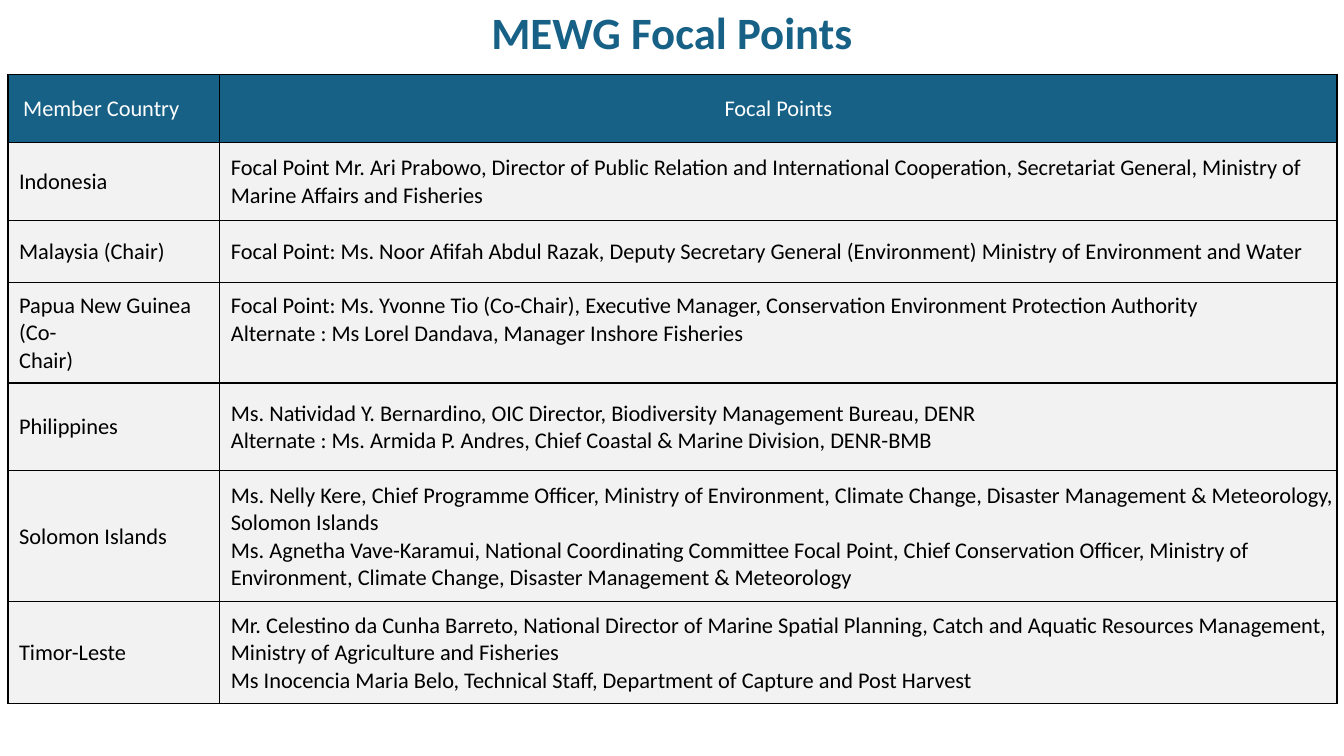
from lxml.etree import SubElement
from pptx import Presentation
from pptx.dml.color import RGBColor
from pptx.enum.text import MSO_ANCHOR, MSO_AUTO_SIZE, PP_ALIGN
from pptx.oxml.ns import qn
from pptx.util import Inches, Pt

WIDE, HIGH = 13.33, 7.5
COLORS = {"head": "176186", "body": "F2F2F2", "white": "FFFFFF", "black": "000000"}
COLS = [2.1, 11.08]
ROWS = [0.67, 0.78, 0.61, 1, 0.87, 1.3, 1.01]
HEADS = ["Member Country", "Focal Points"]
POINTS = [
    ("Indonesia",
     "Focal Point Mr. Ari Prabowo, Director of Public Relation and International "
     "Cooperation, Secretariat General, Ministry of Marine Affairs and Fisheries"),
    ("Malaysia (Chair)",
     "Focal Point: Ms. Noor Afifah Abdul Razak, Deputy Secretary General (Environment) "
     "Ministry of Environment and Water"),
    ("Papua New Guinea (Co-\nChair)",
     "Focal Point: Ms. Yvonne Tio (Co-Chair), Executive Manager, Conservation Environment "
     "Protection Authority\nAlternate : Ms Lorel Dandava, Manager Inshore Fisheries"),
    ("Philippines",
     "Ms. Natividad Y. Bernardino, OIC Director, Biodiversity Management Bureau, DENR\n"
     "Alternate : Ms. Armida P. Andres, Chief Coastal & Marine Division, DENR-BMB"),
    ("Solomon Islands",
     "Ms. Nelly Kere, Chief Programme Officer, Ministry of Environment, Climate Change, "
     "Disaster Management & Meteorology, Solomon Islands\n"
     "Ms. Agnetha Vave-Karamui, National Coordinating Committee Focal Point, Chief "
     "Conservation Officer, Ministry of Environment, Climate Change, Disaster Management "
     "& Meteorology"),
    ("Timor-Leste",
     "Mr. Celestino da Cunha Barreto, National Director of Marine Spatial Planning, Catch "
     "and Aquatic Resources Management, Ministry of Agriculture and Fisheries\n"
     "Ms Inocencia Maria Belo, Technical Staff, Department of Capture and Post Harvest"),
]


def write(frame, text, size=16, color="black", bold=False, align=PP_ALIGN.LEFT):
    """Fill a text frame, one paragraph per line of text."""
    frame.text = text
    frame.word_wrap = True
    for para in frame.paragraphs:
        para.alignment = align
        for run in para.runs:
            font = run.font
            font.name, font.size, font.bold = "Calibri", Pt(size), bold
            font.color.rgb = RGBColor.from_string(COLORS[color])


def border(cell):
    """Draw a thin black line on all four sides."""
    props = cell._tc.get_or_add_tcPr()
    for side in ("lnL", "lnR", "lnT", "lnB"):
        line = SubElement(props, qn(f"a:{side}"), w=str(Pt(1)))
        fill = SubElement(line, qn("a:solidFill"))
        SubElement(fill, qn("a:srgbClr"), val=COLORS["black"])


def paint(cell, text, fill, pads, anchor=MSO_ANCHOR.MIDDLE, **style):
    """Format one cell; pads are left, top, right and bottom."""
    border(cell)
    cell.fill.solid()
    cell.fill.fore_color.rgb = RGBColor.from_string(COLORS[fill])
    (cell.margin_left, cell.margin_top,
     cell.margin_right, cell.margin_bottom) = map(Inches, pads)
    cell.vertical_anchor = anchor
    write(cell.text_frame, text, **style)


def add_title(slide, text):
    title = slide.shapes.title
    title.left, title.top = Inches(2.81), Inches(-0.01)
    title.width, title.height = Inches(7.71), Inches(0.64)
    frame = title.text_frame
    frame.auto_size = MSO_AUTO_SIZE.NONE
    frame.vertical_anchor = MSO_ANCHOR.MIDDLE
    write(frame, text, size=32, color="head", bold=True, align=PP_ALIGN.CENTER)


def add_grid(slide):
    box = slide.shapes.add_table(len(ROWS), len(COLS), Inches(0.08), Inches(0.74),
                                 Inches(sum(COLS)), Inches(sum(ROWS)))
    table = box.table
    for col, width in zip(table.columns, COLS):
        col.width = Inches(width)
    for row, height in zip(table.rows, ROWS):
        row.height = Inches(height)

    # Header row
    looks = [(0.15, PP_ALIGN.LEFT), (0.1, PP_ALIGN.CENTER)]
    for c, (text, (left, align)) in enumerate(zip(HEADS, looks)):
        paint(table.cell(0, c), text, "head", (left, 0.05, 0.1, 0.05),
              color="white", align=align)

    # Country rows; the co-chair's contacts sit level with the country name
    for r, texts in enumerate(POINTS, 1):
        for c, text in enumerate(texts):
            high = c == 1 and "Co-" in texts[0]
            paint(table.cell(r, c), text, "body", (0.11, 0.1 if high else 0.01, 0.01, 0),
                  anchor=MSO_ANCHOR.TOP if high else MSO_ANCHOR.MIDDLE)


def main():
    deck = Presentation()
    deck.slide_width, deck.slide_height = Inches(WIDE), Inches(HIGH)
    slide = deck.slides.add_slide(deck.slide_layouts[5])
    add_title(slide, "MEWG Focal Points")
    add_grid(slide)
    deck.save("out.pptx")


if __name__ == "__main__":
    main()
